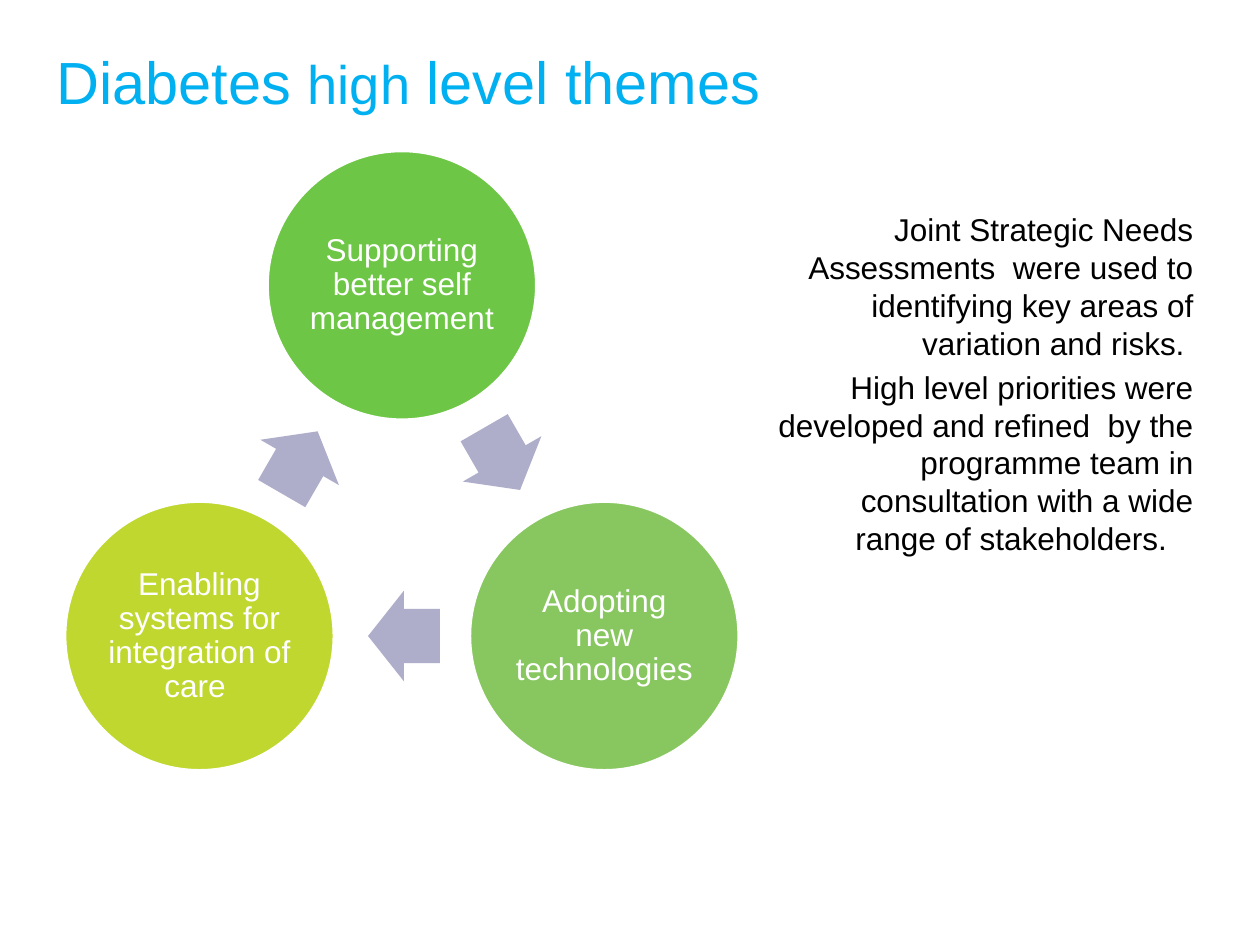
"""Builds a slide with a three-step cycle of diabetes themes and an explanatory note."""
import math

import pptx
import pptx.dml.color
import pptx.enum.shapes
import pptx.enum.text
import pptx.util

TITLE_RUNS = [("Diabetes ", 34), ("high", 31), (" level themes", 34)]
THEMES = [
    ("Supporting better self management ", "6DC645"),
    ("Adopting new technologies ", "88C75F"),
    ("Enabling systems for integration of care ", "C0D72F"),
]
NOTES = [
    "Joint Strategic Needs Assessments  were used to identifying key areas of variation and risks. ",
    "High level priorities were developed and refined  by the programme team in "
    "consultation with a wide range of stakeholders.   ",
]
TITLE_COLOUR, ARROW_COLOUR, WHITE, BLACK = "00B0F0", "AEAECA", "FFFFFF", "000000"
FONT, BODY_SIZE = "Arial", 18
CYCLE_CENTRE, CYCLE_RADIUS = (3.19, 4.12), 1.855
CIRCLE_SIZE, CIRCLE_MARGIN = 2.14, 0.02
ARROW_SIZE, ARROW_SHARE = (0.57, 0.72), 0.495
TITLE_BOX, NOTES_BOX = (0.35, 0.32, 9, 1.25), (6.03, 1.62, 3.54, 3.39)

ALIGN = pptx.enum.text.PP_ALIGN
ANCHOR = pptx.enum.text.MSO_ANCHOR
SHAPE = pptx.enum.shapes.MSO_SHAPE


def rgb(value):
    return pptx.dml.color.RGBColor.from_string(value)


def inches(values):
    return [pptx.util.Inches(value) for value in values]


def add_run(paragraph, text, size, colour):
    run = paragraph.add_run()
    run.text = text
    run.font.name = FONT
    run.font.size = pptx.util.Pt(size)
    run.font.color.rgb = rgb(colour)


def add_centred(slide, kind, centre, size, colour):
    corner = [middle - length / 2 for middle, length in zip(centre, size)]
    shape = slide.shapes.add_shape(kind, *inches([*corner, *size]))
    shape.shadow.inherit = False
    shape.fill.solid()
    shape.fill.fore_color.rgb = rgb(colour)
    return shape


def add_title(slide):
    title = slide.shapes.title
    title.left, title.top, title.width, title.height = inches(TITLE_BOX)
    title.text_frame.vertical_anchor = ANCHOR.TOP
    paragraph = title.text_frame.paragraphs[0]
    paragraph.alignment = ALIGN.LEFT
    paragraph.line_spacing = pptx.util.Pt(40)
    for text, size in TITLE_RUNS:
        add_run(paragraph, text, size, TITLE_COLOUR)


def add_theme(slide, centre, text, colour):
    circle = add_centred(slide, SHAPE.OVAL, centre, (CIRCLE_SIZE, CIRCLE_SIZE), colour)
    circle.line.color.rgb = rgb(WHITE)
    circle.line.width = pptx.util.Pt(2)
    frame = circle.text_frame
    frame.word_wrap = True
    frame.vertical_anchor = ANCHOR.MIDDLE
    frame.margin_left = frame.margin_right = pptx.util.Inches(CIRCLE_MARGIN)
    frame.margin_top = frame.margin_bottom = pptx.util.Inches(CIRCLE_MARGIN)
    paragraph = frame.paragraphs[0]
    paragraph.alignment = ALIGN.CENTER
    paragraph.line_spacing = 0.9
    add_run(paragraph, text, BODY_SIZE, WHITE)


def add_arrow(slide, start, end, rotation):
    centre = [a + (b - a) * ARROW_SHARE for a, b in zip(start, end)]
    arrow = add_centred(slide, SHAPE.RIGHT_ARROW, centre, ARROW_SIZE, ARROW_COLOUR)
    arrow.line.fill.background()
    arrow.adjustments[0], arrow.adjustments[1] = 0.6, 0.5
    arrow.rotation = rotation


def add_cycle(slide):
    step = 360 / len(THEMES)
    angles = [math.radians(step * index - 90) for index in range(len(THEMES))]
    centres = [
        (CYCLE_CENTRE[0] + CYCLE_RADIUS * math.cos(angle),
         CYCLE_CENTRE[1] + CYCLE_RADIUS * math.sin(angle))
        for angle in angles
    ]
    for index, (text, colour) in enumerate(THEMES):
        add_theme(slide, centres[index], text, colour)
        following = centres[(index + 1) % len(centres)]
        add_arrow(slide, centres[index], following, step * (index + 0.5))


def add_notes(slide):
    frame = slide.shapes.add_textbox(*inches(NOTES_BOX)).text_frame
    frame.word_wrap = True
    for index, text in enumerate(NOTES):
        paragraph = frame.add_paragraph() if index else frame.paragraphs[0]
        paragraph.alignment = ALIGN.RIGHT
        paragraph.space_before = pptx.util.Pt(0.2 * BODY_SIZE)
        add_run(paragraph, text, BODY_SIZE, BLACK)


def main():
    deck = pptx.Presentation()
    deck.slide_width, deck.slide_height = inches((10, 7.5))
    slide = deck.slides.add_slide(deck.slide_layouts[5])
    add_title(slide)
    add_cycle(slide)
    add_notes(slide)
    deck.save("out.pptx")


if __name__ == "__main__":
    main()
